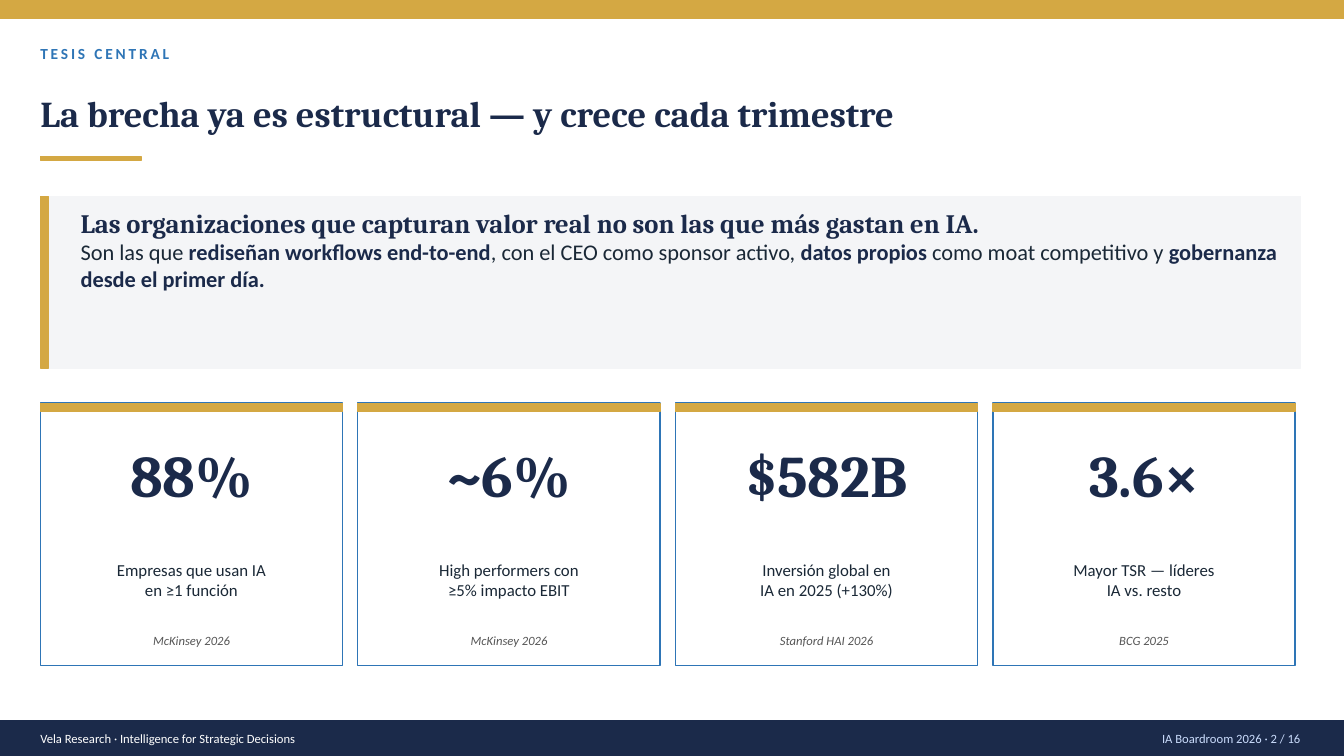
from dataclasses import dataclass

from pptx import Presentation
from pptx import util as u
from pptx.dml import color
from pptx.enum import shapes, text

GOLD, NAVY, BLUE = "D4A843", "1B2A4A", "2E75B6"
INK, GREY, PALE, WHITE, ICE = "1A2836", "555555", "F4F5F7", "FFFFFF", "CADCFC"
SERIF, SANS = "Cambria", "Calibri"
LEFT, CENTER, RIGHT = text.PP_ALIGN.LEFT, text.PP_ALIGN.CENTER, text.PP_ALIGN.RIGHT
TOP, MIDDLE = text.MSO_ANCHOR.TOP, text.MSO_ANCHOR.MIDDLE

MARGIN, WIDTH = 28.8, 900
CARD_TOP, CARD_W, CARD_H, CARD_PITCH = 288, 216, 187.2, 226.8


@dataclass(frozen=True)
class Box:
    x: float
    y: float
    w: float
    h: float

    def pts(self) -> list:
        return [u.Pt(v) for v in (self.x, self.y, self.w, self.h)]


@dataclass(frozen=True)
class Style:
    size: float
    face: str
    color: str
    bold: bool = False
    italic: bool = False


@dataclass(frozen=True)
class Card:
    figure: str
    label: tuple[str, ...]
    source: str


CARDS = [
    Card("88%", ("Empresas que usan IA", "en ≥1 función"), "McKinsey 2026"),
    Card("~6%", ("High performers con", "≥5% impacto EBIT"), "McKinsey 2026"),
    Card("$582B", ("Inversión global en", "IA en 2025 (+130%)"), "Stanford HAI 2026"),
    Card("3.6×", ("Mayor TSR — líderes", "IA vs. resto"), "BCG 2025"),
]
PLAIN = Style(16, SANS, INK, bold=False)
STRONG = Style(16, SANS, NAVY, bold=True)
THESIS = [
    ("Son las que ", PLAIN),
    ("rediseñan workflows end-to-end", STRONG),
    (", con el CEO como sponsor activo, ", PLAIN),
    ("datos propios", STRONG),
    (" como moat competitivo y ", PLAIN),
    ("gobernanza desde el primer día.", STRONG),
]


def rgb(value: str) -> color.RGBColor:
    return color.RGBColor.from_string(value)


def set_font(font, style: Style) -> None:
    font.size = u.Pt(style.size)
    font.name = style.face
    font.bold = style.bold
    font.italic = style.italic
    font.color.rgb = rgb(style.color)


def add_rect(s, box: Box, fill: str, line: str) -> None:
    sp = s.shapes.add_shape(shapes.MSO_SHAPE.RECTANGLE, *box.pts())
    sp.shadow.inherit = False
    sp.fill.solid()
    sp.fill.fore_color.rgb = rgb(fill)
    sp.line.color.rgb = rgb(line)
    sp.line.width = u.Pt(1)


def write(sp, lines: tuple[str, ...], style: Style, align=LEFT, anchor=MIDDLE):
    tf = sp.text_frame
    tf.word_wrap = True
    tf.auto_size = text.MSO_AUTO_SIZE.NONE
    tf.vertical_anchor = anchor
    tf.margin_left = tf.margin_top = tf.margin_right = tf.margin_bottom = 0
    tf.text = "\n".join(lines)
    for p in tf.paragraphs:
        p.alignment = align
        set_font(p.font, style)
    return tf


def add_text(s, box: Box, lines: tuple[str, ...], style: Style, align=LEFT, anchor=MIDDLE):
    return write(s.shapes.add_textbox(*box.pts()), lines, style, align, anchor)


def add_header(s) -> None:
    add_rect(s, Box(0, 0, 960, 13), GOLD, GOLD)
    tf = add_text(s, Box(MARGIN, 25.2, WIDTH, 25.2), ("TESIS CENTRAL",),
                  Style(11, SANS, BLUE, bold=True))
    tf.paragraphs[0].runs[0].font._element.set("spc", "200")
    title = s.shapes.title
    title.left, title.top, title.width, title.height = Box(MARGIN, 50.4, WIDTH, 61.2).pts()
    write(title, ("La brecha ya es estructural — y crece cada trimestre",),
          Style(26, SERIF, NAVY, bold=True))
    add_rect(s, Box(MARGIN, 111.6, 72, 2.9), GOLD, GOLD)


def add_thesis(s) -> None:
    add_rect(s, Box(MARGIN, 140.4, WIDTH, 122.4), PALE, PALE)
    add_rect(s, Box(MARGIN, 140.4, 5.8, 122.4), GOLD, GOLD)
    tf = add_text(s, Box(57.6, 147.6, 864, 108),
                  ("Las organizaciones que capturan valor real no son las que más gastan en IA.",),
                  Style(19, SERIF, NAVY, bold=True), anchor=TOP)
    p = tf.add_paragraph()
    for words, style in THESIS:
        r = p.add_run()
        r.text = words
        set_font(r.font, style)


def add_card(s, card: Card, x: float) -> None:
    add_rect(s, Box(x, CARD_TOP, CARD_W, CARD_H), WHITE, BLUE)
    add_rect(s, Box(x, CARD_TOP, CARD_W, 5.8), GOLD, GOLD)
    add_text(s, Box(x, 302.4, CARD_W, 72), (card.figure,),
             Style(42, SERIF, NAVY, bold=True), CENTER)
    inner_x, inner_w = x + 7.2, CARD_W - 14.4
    add_text(s, Box(inner_x, 381.6, inner_w, 64.8), card.label, Style(12, SANS, INK), CENTER)
    add_text(s, Box(inner_x, 446.4, inner_w, 21.6), (card.source,),
             Style(9, SANS, GREY, italic=True), CENTER)


def add_footer(s) -> None:
    add_rect(s, Box(0, 514.8, 960, 25.2), NAVY, NAVY)
    add_text(s, Box(MARGIN, 517, 504, 21.6),
             ("Vela Research · Intelligence for Strategic Decisions",), Style(9, SANS, WHITE))
    add_text(s, Box(540, 517, 388.8, 21.6), ("IA Boardroom 2026 · 2 / 16",),
             Style(9, SANS, ICE), RIGHT)


def main() -> None:
    prs = Presentation()
    prs.slide_width, prs.slide_height = u.Pt(960), u.Pt(540)
    s = prs.slides.add_slide(prs.slide_layouts[5])
    add_header(s)
    add_thesis(s)
    for i, card in enumerate(CARDS):
        add_card(s, card, MARGIN + i * CARD_PITCH)
    add_footer(s)
    prs.save("out.pptx")


if __name__ == "__main__":
    main()
